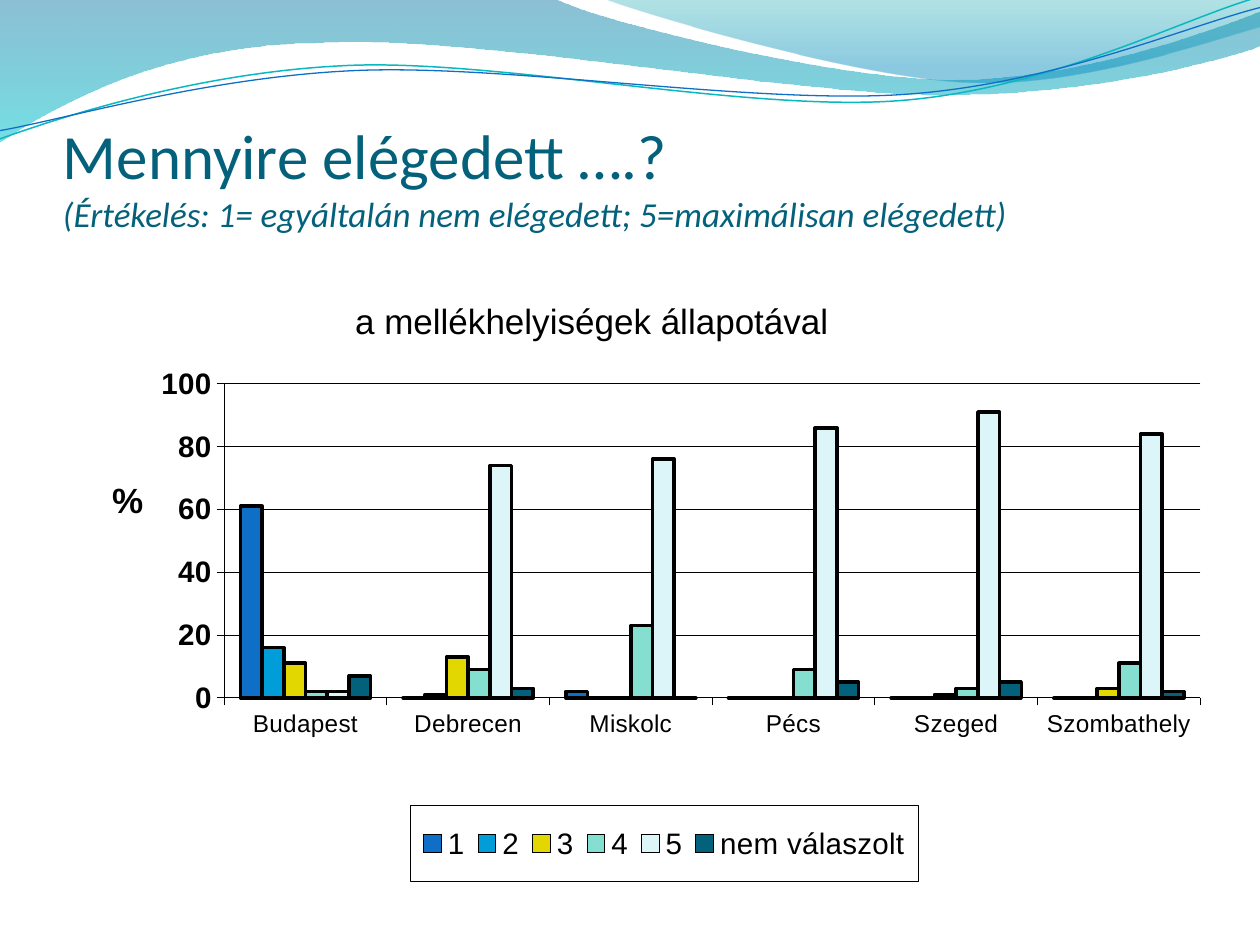
from lxml import etree
from pptx import Presentation
from pptx.chart.data import CategoryChartData
from pptx.dml.color import RGBColor
from pptx.enum import chart as ch, text
from pptx.oxml import parse_xml
from pptx.oxml.ns import nsdecls, qn
from pptx.util import Inches, Pt


def rgb(value):
    return RGBColor.from_string(value)


def add_layout(parent, index, **values):
    """Place a chart part by fractions of the chart area."""
    old = parent.find(qn("c:layout"))
    if old is not None:
        parent.remove(old)
    items = "".join(f'<c:{k} val="{v}"/>' for k, v in values.items())
    parent.insert(index, parse_xml(
        f'<c:layout {nsdecls("c")}><c:manualLayout>{items}'
        "</c:manualLayout></c:layout>"))


prs = Presentation()
prs.slide_width, prs.slide_height = Inches(10), Inches(7.5)
s = prs.slides.add_slide(prs.slide_layouts[6])

# Waves: two-number steps are straight, six-number steps are Bezier curves
# Gradient stops: position %, colour, opacity %
waves = [
    ((0, -0.01), [
        (4.4, -0.01), (4.76, 0.17, 6.64, 0.63, 7.58, 0.63),
        (8.53, 0.63, 9.58, 0.26, 10, 0.09), (10.01, 0.36),
        (9.83, 0.44, 8.7, 0.76, 7.46, 0.75),
        (6.22, 0.75, 3.82, 0.28, 2.57, 0.34),
        (1.29, 0.35, 0.46, 0.83, -0.01, 1.13)],
     [(0, "0074A1", 45), (100, "00C6CF", 55)], None),
    ((4.79, -0.01), [
        (5.09, 0.11, 6.82, 0.62, 7.69, 0.65),
        (8.56, 0.69, 9.61, 0.32, 10, 0.21), (10, 0)],
     [(0, "00A1A9", 30), (80, "008BBF", 45)], None),
    ((-0.02, 1.11), [
        (0.48, 0.93, 1.58, 0.57, 2.77, 0.52),
        (3.95, 0.47, 5.93, 0.89, 7.13, 0.8),
        (8.33, 0.71, 9.38, 0.15, 9.98, -0.02)], None, ("0AB8BF", 0.85)),
    ((-0.02, 1.04), [
        (0.47, 0.96, 1.64, 0.61, 2.83, 0.56),
        (4.03, 0.51, 5.97, 0.83, 7.17, 0.75),
        (8.36, 0.67, 9.41, 0.21, 10, 0.06)], None, ("0F6FC6", 0.75)),
]
for start, segments, stops, line in waves:
    fb = s.shapes.build_freeform(Inches(start[0]), Inches(start[1]))
    fb.add_line_segments([(Inches(seg[-2]), Inches(seg[-1]))
                          for seg in segments], close=stops is not None)
    sp = fb.convert_to_shape()
    sp.shadow.inherit = False
    # Turn the straight steps into curves by adding their control points
    for step, seg in zip(list(sp._element.iter(qn("a:lnTo"))), segments):
        if len(seg) == 6:
            step.tag = qn("a:cubicBezTo")
            for i in (0, 2):
                pt = etree.Element(qn("a:pt"))
                pt.set("x", str(Inches(seg[i]) - sp.left))
                pt.set("y", str(Inches(seg[i + 1]) - sp.top))
                step.insert(i // 2, pt)
    sp.fill.background()
    if stops:
        sp.line.fill.background()
        gs = "".join(
            f'<a:gs pos="{pos * 1000}"><a:srgbClr val="{color}">'
            f'<a:alpha val="{alpha * 1000}"/></a:srgbClr></a:gs>'
            for pos, color, alpha in stops)
        no_fill = sp._element.spPr.find(qn("a:noFill"))
        no_fill.getparent().replace(no_fill, parse_xml(
            f'<a:gradFill {nsdecls("a")}><a:gsLst>{gs}</a:gsLst>'
            '<a:lin ang="5400000" scaled="0"/></a:gradFill>'))
    else:
        sp.line.color.rgb = rgb(line[0])
        sp.line.width = Pt(line[1])

# Title
tf = s.shapes.add_textbox(Inches(0.5), Inches(0.77),
                          Inches(9), Inches(1.09)).text_frame
tf.word_wrap = True
tf.vertical_anchor = text.MSO_ANCHOR.BOTTOM
tf.margin_left = tf.margin_right = tf.margin_bottom = 0
p = tf.paragraphs[0]
p.font.name = "Calibri"
p.font.color.rgb = rgb("04617B")
r = p.add_run()
r.text = "Mennyire elégedett ….?"
r.font.size = Pt(36)
p.add_line_break()
r = p.add_run()
r.text = "(Értékelés: 1= egyáltalán nem elégedett; 5=maximálisan elégedett)"
r.font.size = Pt(20)
r.font.italic = True

# Chart
series = [
    ("1", (61, 0, 2, 0, 0, 0), "0F6FC6"),
    ("2", (16, 1, 0, 0, 0, 0), "009DD9"),
    ("3", (11, 13, 0, 0, 1, 3), "E2D700"),
    ("4", (2, 9, 23, 9, 3, 11), "85DFD0"),
    ("5", (2, 74, 76, 86, 91, 84), "DBF5F9"),
    ("nem válaszolt", (7, 3, 0, 5, 5, 2), "04617B"),
]
data = CategoryChartData()
data.categories = ["Budapest", "Debrecen", "Miskolc",
                   "Pécs", "Szeged", "Szombathely"]
for name, values, _ in series:
    data.add_series(name, values)
chart = s.shapes.add_chart(ch.XL_CHART_TYPE.COLUMN_CLUSTERED, Inches(0.57),
                           Inches(1.99), Inches(8.96), Inches(5.01), data).chart
chart.has_title = False
chart.font.name = "Arial"
chart.font.size = Pt(34.9)
chart.font.bold = True
chart.font.color.rgb = rgb("000000")
plot = chart.plots[0]
plot.gap_width, plot.overlap = 150, 0
plot.vary_by_categories = False
for ser, (_, _, color) in zip(plot.series, series):
    ser.format.fill.solid()
    ser.format.fill.fore_color.rgb = rgb(color)
    ser.format.line.color.rgb = rgb("000000")
    ser.format.line.width = Pt(2.05)
    ser.invert_if_negative = False
add_layout(chart._chartSpace.chart.plotArea, 0, layoutTarget="inner",
           xMode="edge", yMode="edge", x=0.135, y=0.211, w=0.865, h=0.498)

# Axes
cat, val = chart.category_axis, chart.value_axis
val.minimum_scale, val.maximum_scale, val.major_unit = 0, 100, 20
val.has_major_gridlines = True
for axis, size, bold in ((cat, 13.9, False), (val, 16.9, True)):
    axis.major_tick_mark = ch.XL_TICK_MARK.OUTSIDE
    font = axis.tick_labels.font
    font.size, font.bold, font.name = Pt(size), bold, "Arial"
    font.color.rgb = rgb("000000")
cat.tick_label_position = ch.XL_TICK_LABEL_POSITION.LOW
for part in (cat, val, val.major_gridlines):
    part.format.line.color.rgb = rgb("000000")
    part.format.line.width = Pt(0.5)
tf = val.axis_title.text_frame
tf.text = "%"
tf._txBody.find(qn("a:bodyPr")).set("rot", "0")
p = tf.paragraphs[0]
p.font.size, p.font.bold, p.font.name = Pt(20), True, "Arial"
p.font.color.rgb = rgb("000000")
add_layout(val.axis_title._element, 1, xMode="edge", yMode="edge",
           x=0.03, y=0.35)

# Legend with a thin frame
chart.has_legend = True
legend = chart.legend
legend.position = ch.XL_LEGEND_POSITION.BOTTOM
legend.include_in_layout = False
font = legend.font
font.size, font.bold, font.name = Pt(16.9), False, "Arial"
font.color.rgb = rgb("000000")
add_layout(legend._element, 1, xMode="edge", yMode="edge",
           x=0.3, y=0.88, w=0.45, h=0.12)
legend._element.find(qn("c:txPr")).addprevious(parse_xml(
    f'<c:spPr {nsdecls("c", "a")}><a:ln w="6350"><a:solidFill>'
    '<a:srgbClr val="000000"/></a:solidFill></a:ln></c:spPr>'))

# Chart heading
tf = s.shapes.add_textbox(Inches(2.72), Inches(2.33),
                          Inches(5.04), Inches(0.44)).text_frame
tf.word_wrap = True
tf.auto_size = text.MSO_AUTO_SIZE.SHAPE_TO_FIT_TEXT
p = tf.paragraphs[0]
p.text = "a mellékhelyiségek állapotával"
p.font.size, p.font.name = Pt(20), "Arial"
p.font.color.rgb = rgb("000000")

prs.save("out.pptx")
